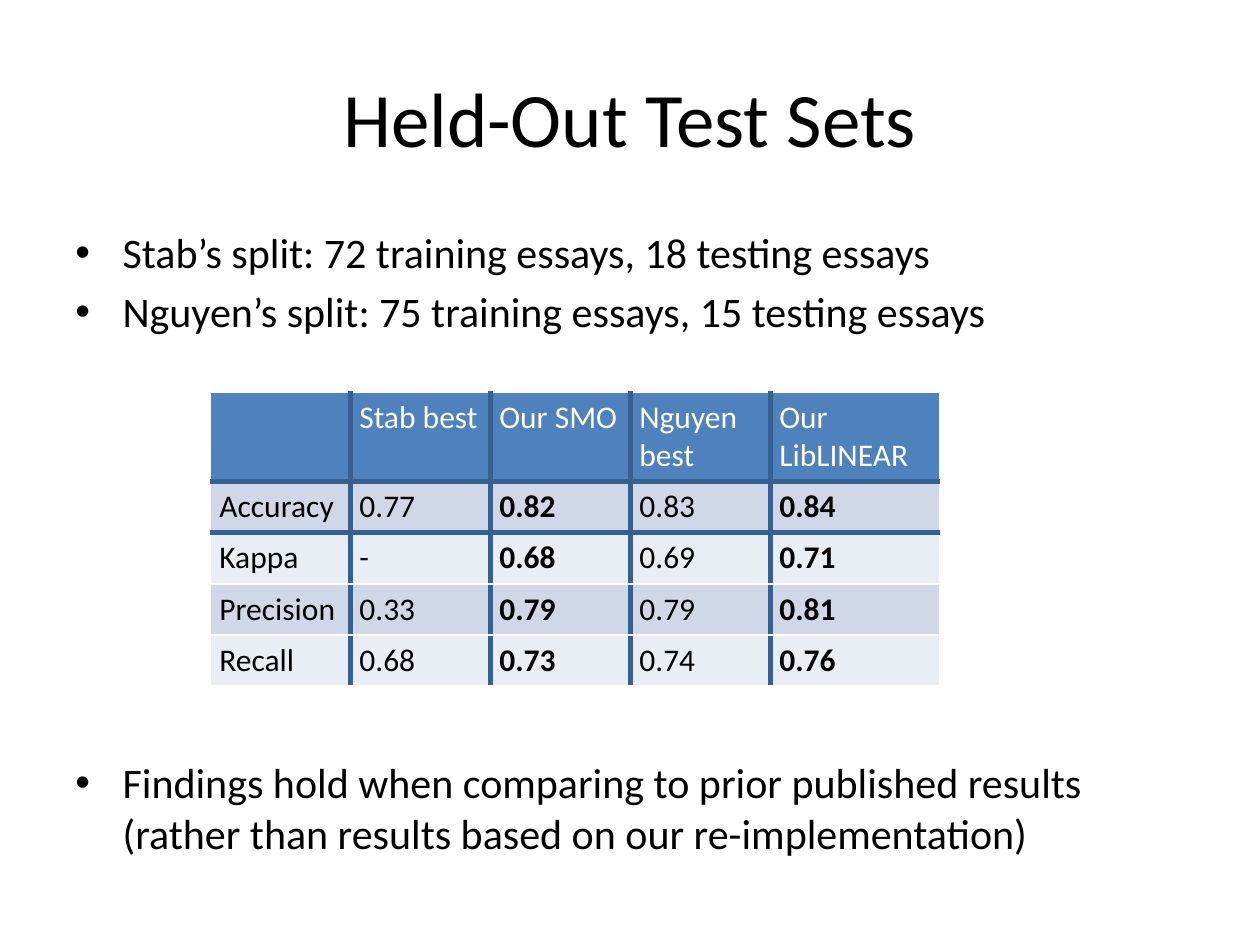
import dataclasses

import lxml.etree
import pptx
import pptx.dml.color
import pptx.enum.text
import pptx.oxml.ns
import pptx.util

Pt = pptx.util.Pt
qn = pptx.oxml.ns.qn


@dataclasses.dataclass(frozen=True)
class Theme:
    font: str = "Calibri"
    text: str = "000000"
    white: str = "FFFFFF"
    header: str = "4F81BD"
    rule: str = "376092"
    bands: tuple = ("D0D8E8", "E9EDF4")
    title_size: float = 44
    body_size: float = 24
    table_size: float = 18
    rule_width: float = 3
    grid_width: float = 1


THEME = Theme()

SPLITS = [
    "Stab’s split: 72 training essays, 18 testing essays",
    "Nguyen’s split: 75 training essays, 15 testing essays",
]
FINDINGS = [
    "Findings hold when comparing to prior published results "
    "(rather than results based on our re-implementation)",
]
RESULTS = [
    ["", "Stab best", "Our SMO", "Nguyen best", "Our LibLINEAR"],
    ["Accuracy", "0.77", "0.82", "0.83", "0.84"],
    ["Kappa", "-", "0.68", "0.69", "0.71"],
    ["Precision", "0.33", "0.79", "0.79", "0.81"],
    ["Recall", "0.68", "0.73", "0.74", "0.76"],
]
COLUMN_WIDTHS = [80, 80, 80, 80, 96.5]
ROW_HEIGHTS = [51.2, 29.2, 29.2, 29.2, 29.2]
OUR_COLUMNS = (2, 4)
RULED_ROWS = (1, 2)


def color(value):
    return pptx.dml.color.RGBColor.from_string(value)


def write_text(para, text, size, fill=THEME.text, bold=False, align=None):
    para.alignment = align
    span = para.add_run()
    span.text = text
    span.font.name = THEME.font
    span.font.size = Pt(size)
    span.font.bold = bold
    span.font.color.rgb = color(fill)


def add_title(page, text):
    title = page.shapes.title
    title.left, title.top = Pt(36), Pt(21.6)
    title.width, title.height = Pt(648), Pt(90)
    title.text_frame.vertical_anchor = pptx.enum.text.MSO_ANCHOR.MIDDLE
    write_text(title.text_frame.paragraphs[0], text, THEME.title_size,
               align=pptx.enum.text.PP_ALIGN.CENTER)


def add_bullets(page, items, top, height):
    box = page.shapes.add_textbox(Pt(36), Pt(top), Pt(648), Pt(height))
    frame = box.text_frame
    frame.word_wrap = True
    for index, item in enumerate(items):
        para = frame.add_paragraph() if index else frame.paragraphs[0]
        properties = para._p.get_or_add_pPr()
        properties.set("marL", str(Pt(27)))
        properties.set("indent", str(Pt(-27)))
        lxml.etree.SubElement(properties, qn("a:buFont"), typeface="Arial")
        lxml.etree.SubElement(properties, qn("a:buChar"), char="•")
        if index:
            para.space_before = Pt(4.8)
        write_text(para, item, THEME.body_size)


def set_border(cell, side, ruled):
    width = THEME.rule_width if ruled else THEME.grid_width
    properties = cell._tc.get_or_add_tcPr()
    line = lxml.etree.SubElement(properties, qn(f"a:ln{side}"), w=str(Pt(width)))
    fill = lxml.etree.SubElement(line, qn("a:solidFill"))
    lxml.etree.SubElement(fill, qn("a:srgbClr"),
                          val=THEME.rule if ruled else THEME.white)


def format_cell(cell, text, row, column):
    last_column = len(COLUMN_WIDTHS) - 1
    set_border(cell, "L", column > 0)
    set_border(cell, "R", column < last_column)
    set_border(cell, "T", row in RULED_ROWS)
    set_border(cell, "B", row + 1 in RULED_ROWS)
    cell.fill.solid()
    cell.fill.fore_color.rgb = color(THEME.bands[(row - 1) % 2] if row else THEME.header)
    cell.margin_left = cell.margin_right = Pt(5)
    cell.margin_top = cell.margin_bottom = Pt(3.6)
    if text:
        write_text(cell.text_frame.paragraphs[0], text, THEME.table_size,
                   fill=THEME.text if row else THEME.white,
                   bold=row > 0 and column in OUR_COLUMNS)


def add_results(page, left, top):
    table = page.shapes.add_table(
        len(ROW_HEIGHTS), len(COLUMN_WIDTHS), Pt(left), Pt(top),
        Pt(sum(COLUMN_WIDTHS)), Pt(sum(ROW_HEIGHTS))).table
    table.first_row = table.horz_banding = False
    for column, width in zip(table.columns, COLUMN_WIDTHS):
        column.width = Pt(width)
    for row, height in zip(table.rows, ROW_HEIGHTS):
        row.height = Pt(height)
    for row, values in enumerate(RESULTS):
        for column, text in enumerate(values):
            format_cell(table.cell(row, column), text, row, column)


def main():
    deck = pptx.Presentation()
    deck.slide_width, deck.slide_height = Pt(720), Pt(540)
    page = deck.slides.add_slide(deck.slide_layouts.get_by_name("Title Only"))
    add_title(page, "Held-Out Test Sets")
    add_bullets(page, SPLITS, top=126, height=72)
    add_results(page, left=120.4, top=224)
    add_bullets(page, FINDINGS, top=429, height=66)
    deck.save("out.pptx")


if __name__ == "__main__":
    main()
